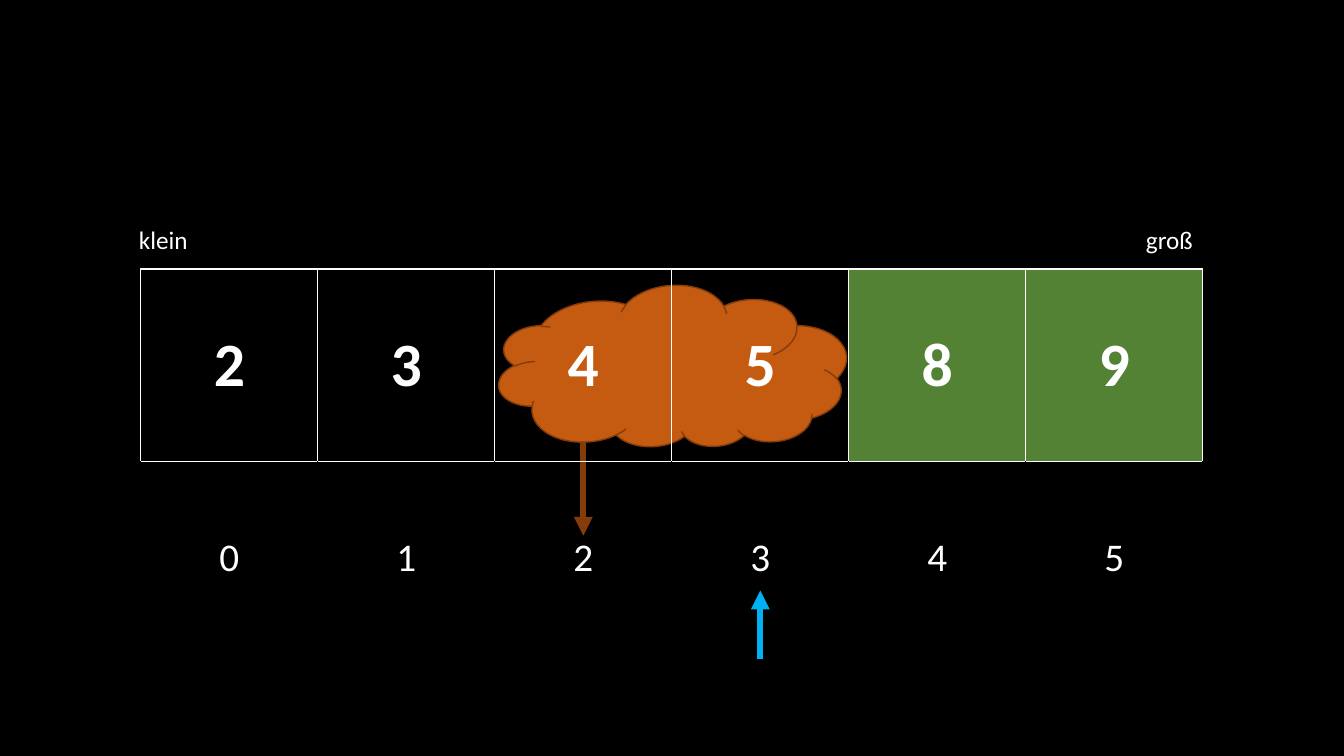
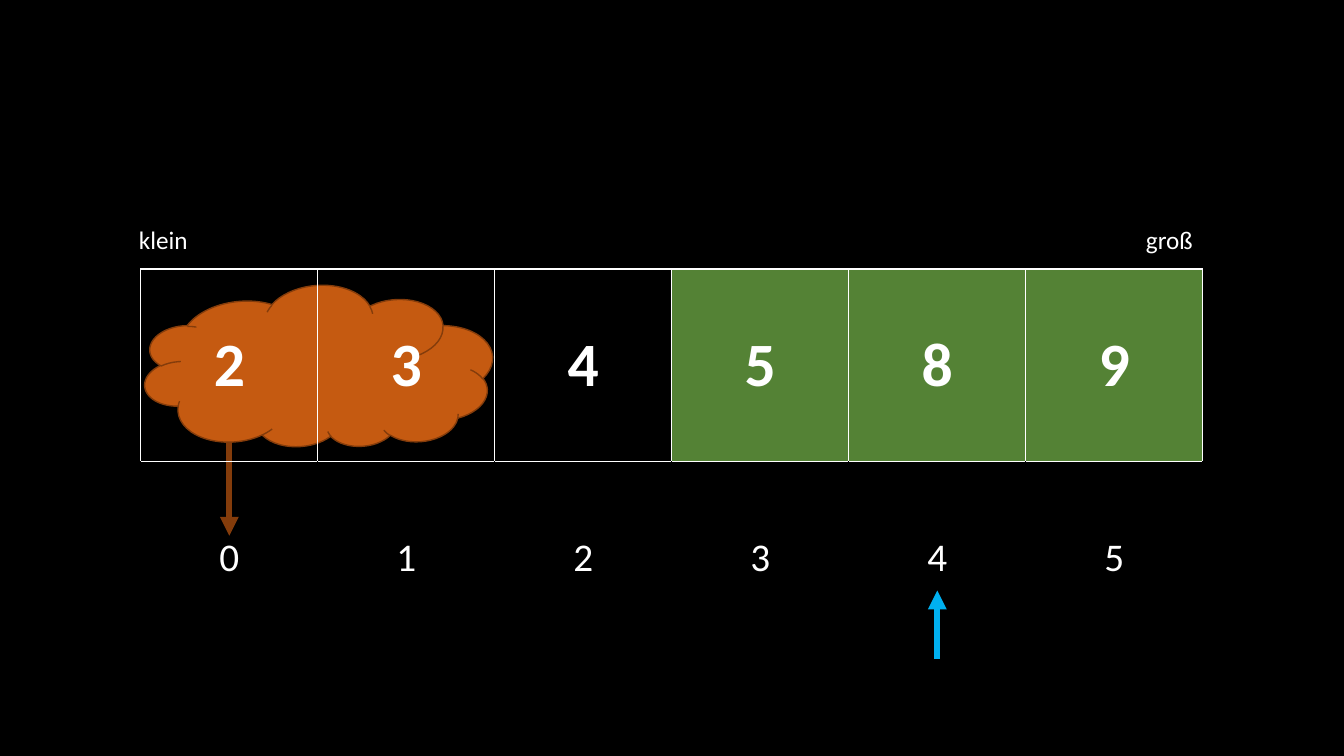
from dataclasses import dataclass

from lxml.etree import SubElement
from pptx import Presentation
from pptx.dml.color import RGBColor
from pptx.enum.shapes import MSO_CONNECTOR, MSO_SHAPE
from pptx.enum.text import MSO_ANCHOR, MSO_AUTO_SIZE, PP_ALIGN
from pptx.oxml.ns import qn
from pptx.util import Cm, Pt


@dataclass(frozen=True)
class Theme:
    font: str = "Calibri"
    black: str = "000000"
    white: str = "FFFFFF"
    sorted_fill: str = "548235"
    cloud_fill: str = "C55A11"
    cloud_line: str = "843C0B"
    pointer: str = "00B0F0"
    value_size: int = 44
    index_size: int = 28
    label_size: int = 18
    thin: float = 1
    thick: float = 4.5


LEFT, TOP = 3.55, 6.78
COL_W, ROW_H = 4.46, 4.85
NO_STYLE = "{2D5ABB26-0587-4C30-8999-92F81FD0307C}"
VALUES = [2, 3, 4, 5, 8, 9]


def rgb(color):
    return RGBColor.from_string(color)


class Deck:
    def __init__(self, theme):
        self.theme = theme
        self.prs = Presentation()
        self.prs.slide_width, self.prs.slide_height = Cm(33.87), Cm(19.05)
        fill = self.prs.slide_master.background.fill
        fill.solid()
        fill.fore_color.rgb = rgb(theme.black)

    def add_slide(self):
        self.s = self.prs.slides.add_slide(self.prs.slide_layouts[6])

    def set_text(self, tf, text, size, align, bold=False):
        tf.text = text
        p = tf.paragraphs[0]
        p.alignment = align
        font = p.runs[0].font
        font.name, font.size, font.bold = self.theme.font, Pt(size), bold
        font.color.rgb = rgb(self.theme.white)

    def label(self, text, x, align):
        sp = self.s.shapes.add_textbox(Cm(x), Cm(5.54), Cm(3.84), Cm(1.03))
        tf = sp.text_frame
        tf.word_wrap = True
        tf.auto_size = MSO_AUTO_SIZE.SHAPE_TO_FIT_TEXT
        self.set_text(tf, text, self.theme.label_size, align)

    def arrow(self, index, y1, y2, color):
        x = LEFT + (index + 0.5) * COL_W
        cxn = self.s.shapes.add_connector(
            MSO_CONNECTOR.STRAIGHT, Cm(x), Cm(y1), Cm(x), Cm(y2))
        cxn.line.color.rgb = rgb(color)
        cxn.line.width = Pt(self.theme.thick)
        spPr = cxn._element.spPr
        SubElement(spPr.get_or_add_ln(), qn("a:tailEnd"), type="triangle")
        SubElement(spPr, qn("a:effectLst"))

    def cloud(self, index):
        sp = self.s.shapes.add_shape(
            MSO_SHAPE.CLOUD, Cm(LEFT + index * COL_W + 0.08), Cm(7.21), Cm(8.79), Cm(4.13))
        sp.shadow.inherit = False
        sp.fill.solid()
        sp.fill.fore_color.rgb = rgb(self.theme.cloud_fill)
        sp.line.color.rgb = rgb(self.theme.cloud_line)
        sp.line.width = Pt(self.theme.thin)
        sp.rotation = 355.5
        sp._element.spPr.xfrm.set("flipV", "1")

    def borders(self, cell, side_color, top_color, bottom_color):
        tcPr = cell._tc.get_or_add_tcPr()
        colors = {"L": side_color, "R": side_color, "T": top_color, "B": bottom_color}
        for side, color in colors.items():
            ln = SubElement(tcPr, qn(f"a:ln{side}"), w=str(Pt(self.theme.thin)))
            solid = SubElement(ln, qn("a:solidFill"))
            SubElement(solid, qn("a:srgbClr"), val=color)

    def array(self, values, sorted_from):
        t = self.theme
        frame = self.s.shapes.add_table(
            2, len(values), Cm(LEFT), Cm(TOP), Cm(COL_W * len(values)), Cm(2 * ROW_H))
        table = frame.table
        table.first_row = table.horz_banding = False
        table._tbl.tblPr.find(qn("a:tableStyleId")).text = NO_STYLE
        for index, value in enumerate(values):
            value_cell, index_cell = table.cell(0, index), table.cell(1, index)
            self.borders(value_cell, t.white, t.white, t.white)
            self.borders(index_cell, t.black, t.white, t.black)
            self.set_text(value_cell.text_frame, str(value), t.value_size, PP_ALIGN.CENTER, True)
            self.set_text(index_cell.text_frame, str(index), t.index_size, PP_ALIGN.CENTER)
            for cell in (value_cell, index_cell):
                cell.vertical_anchor = MSO_ANCHOR.MIDDLE
                cell.fill.background()
            if index >= sorted_from:
                value_cell.fill.solid()
                value_cell.fill.fore_color.rgb = rgb(t.sorted_fill)

    def sort_step(self, compared, pointer, sorted_from):
        self.add_slide()
        self.arrow(compared, 10, 13.5, self.theme.cloud_line)
        self.cloud(compared)
        self.array(VALUES, sorted_from)
        self.label("groß", 26.47, PP_ALIGN.RIGHT)
        self.label("klein", 3.25, PP_ALIGN.LEFT)
        self.arrow(pointer, 16.61, 14.88, self.theme.pointer)


def main():
    deck = Deck(Theme())
    deck.sort_step(compared=2, pointer=3, sorted_from=4)
    deck.sort_step(compared=0, pointer=4, sorted_from=3)
    deck.prs.save("out.pptx")


if __name__ == "__main__":
    main()
